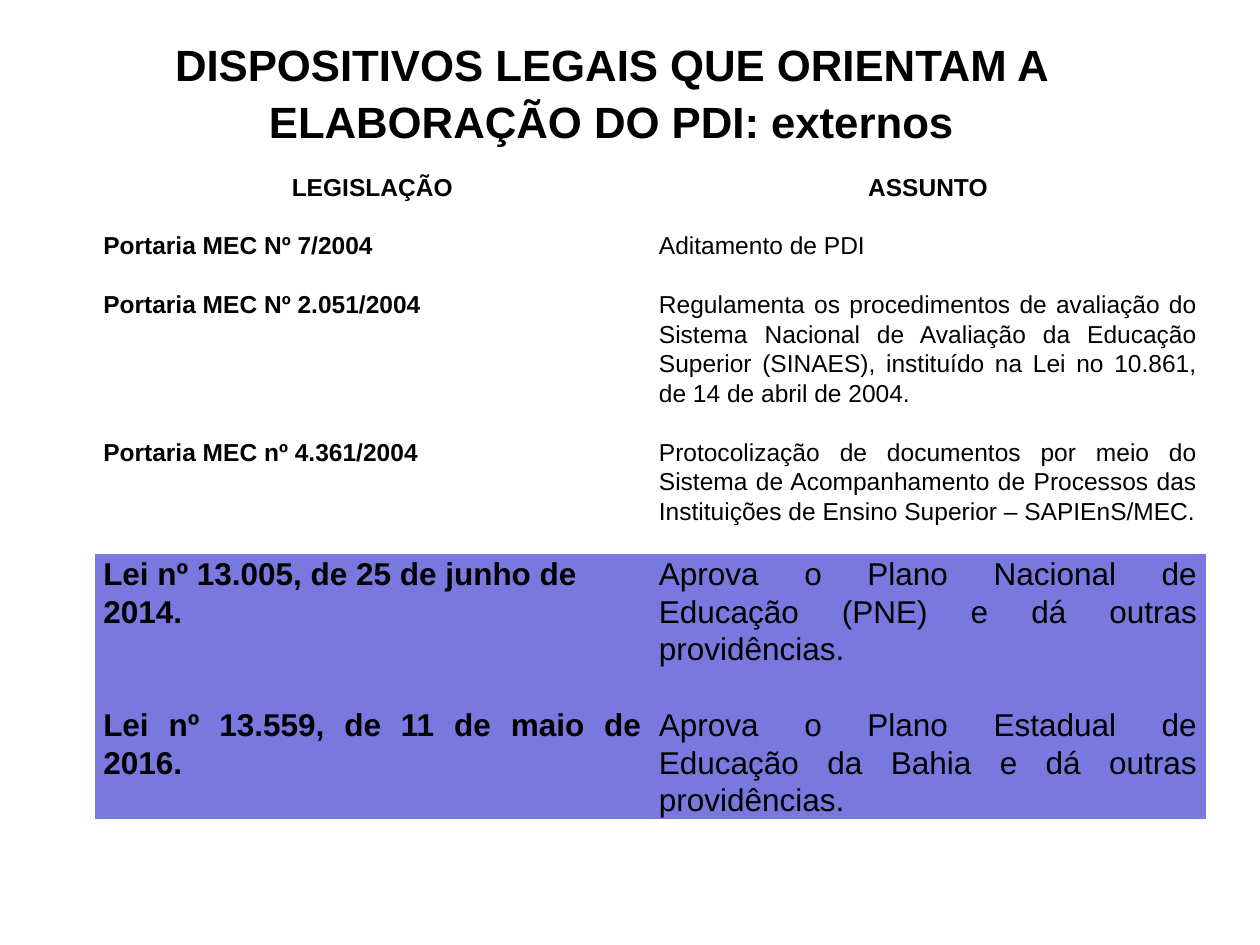
from pptx import Presentation
from pptx import util as u
from pptx.dml import color
from pptx.enum import text
from pptx.oxml import ns

PLAIN_TABLE = "{2D5ABB26-0587-4C30-8999-92F81FD0307C}"
AL = text.PP_ALIGN
HIGHLIGHT = "7878DE"


def rgb(value):
    return color.RGBColor.from_string(value)


def write(tf, content, size=14, bold=False, align=AL.JUSTIFY, spacing=1.07):
    tf.word_wrap = True
    p = tf.paragraphs[0]
    p.alignment = align
    p.line_spacing = spacing
    r = p.add_run()
    r.text = content
    r.font.name = "Arial"
    r.font.size = u.Pt(size)
    r.font.bold = bold
    r.font.color.rgb = rgb("000000")


class Deck:
    def __init__(self, prs):
        self.s = prs.slides.add_slide(prs.slide_layouts[5])

    def title(self, content, left, top, width, height):
        sp = self.s.shapes.title
        sp.left, sp.top = u.Inches(left), u.Inches(top)
        sp.width, sp.height = u.Inches(width), u.Inches(height)
        tf = sp.text_frame
        tf.auto_size = text.MSO_AUTO_SIZE.NONE
        tf.vertical_anchor = text.MSO_ANCHOR.MIDDLE
        tf.margin_left = tf.margin_right = u.Inches(0.1)
        tf.margin_top, tf.margin_bottom = u.Inches(0.05), u.Inches(0.44)
        write(tf, content, size=25, bold=True, align=AL.CENTER, spacing=1.08)

    def table(self, header, rows, left, top, width, heights):
        frame = self.s.shapes.add_table(
            len(heights), len(header), u.Inches(left), u.Inches(top),
            u.Inches(width), u.Inches(sum(heights)))
        table = frame.table
        table.first_row = table.horz_banding = False
        table._tbl.tblPr.find(ns.qn("a:tableStyleId")).text = PLAIN_TABLE
        for row, height in zip(table.rows, heights):
            row.height = u.Inches(height)
        for j, label in enumerate(header):
            self.cell(table.cell(0, j), label, side=0.05, above=0.23,
                      bold=True, align=AL.CENTER, spacing=1.0)
        for i, (law, subject, size, align, fill) in enumerate(rows, 1):
            self.cell(table.cell(i, 0), law, fill=fill, size=size, bold=True, align=align)
            self.cell(table.cell(i, 1), subject, fill=fill, size=size)

    def cell(self, cell, content, fill=None, side=0.07, above=0, **style):
        cell.margin_left = cell.margin_right = u.Inches(side)
        cell.margin_top, cell.margin_bottom = u.Inches(above), 0
        if fill:
            cell.fill.solid()
            cell.fill.fore_color.rgb = rgb(fill)
        else:
            cell.fill.background()
        write(cell.text_frame, content, **style)


def main():
    prs = Presentation()
    prs.slide_width, prs.slide_height = u.Inches(10), u.Inches(7.5)
    deck = Deck(prs)
    deck.title("DISPOSITIVOS LEGAIS QUE ORIENTAM A ELABORAÇÃO DO PDI: externos",
               0.75, 0.29, 8.2, 1.25)
    rows = [
        ("Portaria MEC Nº 7/2004", "Aditamento de PDI", 14, AL.JUSTIFY, None),
        ("Portaria MEC Nº 2.051/2004",
         "Regulamenta os procedimentos de avaliação do Sistema Nacional de Avaliação "
         "da Educação Superior (SINAES), instituído na Lei no 10.861, de 14 de abril "
         "de 2004.", 14, AL.JUSTIFY, None),
        ("Portaria MEC nº 4.361/2004",
         "Protocolização de documentos por meio do Sistema de Acompanhamento de "
         "Processos das Instituições de Ensino Superior – SAPIEnS/MEC.",
         14, AL.JUSTIFY, None),
        ("Lei nº 13.005, de 25 de junho de 2014.",
         "Aprova o Plano Nacional de Educação (PNE) e dá outras providências.",
         18, AL.LEFT, HIGHLIGHT),
        ("Lei nº 13.559, de 11 de maio de 2016.",
         "Aprova o Plano Estadual de Educação da Bahia e dá outras providências.",
         18, AL.JUSTIFY, HIGHLIGHT),
    ]
    deck.table(("LEGISLAÇÃO", "ASSUNTO"), rows, 0.75, 1.15, 8.82,
               (0.68, 0.47, 1.17, 0.93, 1.2, 0.9))
    prs.save("out.pptx")


if __name__ == "__main__":
    main()
